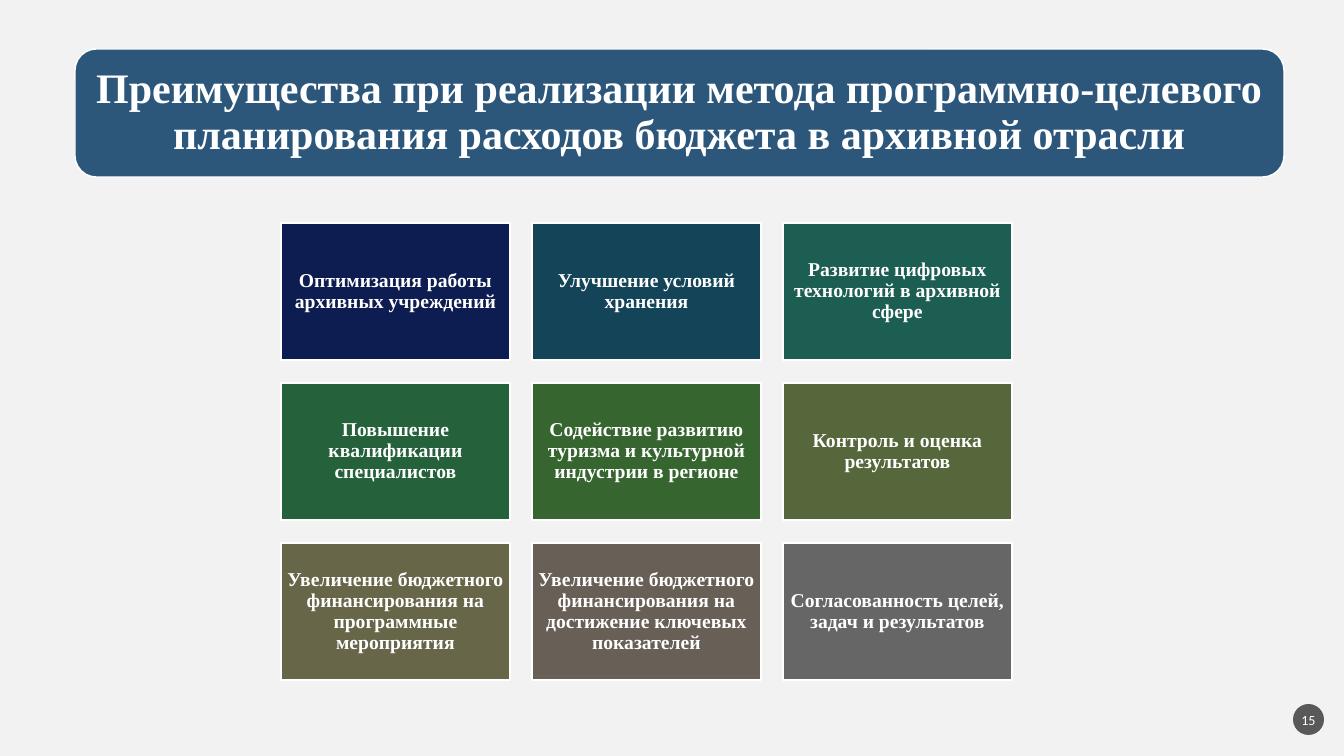
import pptx
import pptx.dml.color
import pptx.enum.shapes
import pptx.enum.text
import pptx.util

RGBColor = pptx.dml.color.RGBColor
SHAPE = pptx.enum.shapes.MSO_SHAPE

EMU_PER_PX = 914400 / 100.8
SLIDE_WIDTH, SLIDE_HEIGHT = 1344, 756

WHITE = RGBColor(0xFF, 0xFF, 0xFF)
BACKGROUND = RGBColor(0xF2, 0xF2, 0xF2)
TITLE_BLUE = RGBColor(0x2C, 0x56, 0x7A)
BADGE_GRAY = RGBColor(0x59, 0x59, 0x59)
NAVY = RGBColor(0x0D, 0x1D, 0x51)
PETROL = RGBColor(0x14, 0x44, 0x58)
TEAL = RGBColor(0x1C, 0x5E, 0x52)
EMERALD = RGBColor(0x25, 0x62, 0x3B)
GREEN = RGBColor(0x36, 0x65, 0x30)
OLIVE = RGBColor(0x55, 0x67, 0x3B)
KHAKI = RGBColor(0x68, 0x66, 0x48)
TAUPE = RGBColor(0x68, 0x5F, 0x57)
GRAY = RGBColor(0x66, 0x66, 0x66)

TITLE = ("Преимущества при реализации метода программно-целевого "
         "планирования расходов бюджета в архивной отрасли")
BENEFITS = [
    ("Оптимизация работы архивных учреждений", NAVY),
    ("Улучшение условий хранения", PETROL),
    ("Развитие цифровых технологий в архивной сфере", TEAL),
    ("Повышение квалификации специалистов", EMERALD),
    ("Содействие развитию туризма и культурной индустрии в регионе", GREEN),
    ("Контроль и оценка результатов", OLIVE),
    ("Увеличение бюджетного финансирования на программные мероприятия", KHAKI),
    ("Увеличение бюджетного финансирования на достижение ключевых показателей", TAUPE),
    ("Согласованность целей, задач и результатов", GRAY),
]


def px(length):
    return pptx.util.Emu(round(length * EMU_PER_PX))


def add_panel(slide, kind, box, fill, outline=WHITE):
    shape = slide.shapes.add_shape(kind, *map(px, box))
    shape.shadow.inherit = False
    shape.fill.solid()
    shape.fill.fore_color.rgb = fill
    if outline is None:
        shape.line.fill.background()
    else:
        shape.line.color.rgb = outline
        shape.line.width = pptx.util.Pt(1)
    return shape


def write_text(shape, text, size, inset=0, font="Times New Roman", bold=True, spacing=0.9):
    frame = shape.text_frame
    frame.word_wrap = True
    frame.vertical_anchor = pptx.enum.text.MSO_ANCHOR.MIDDLE
    frame.margin_left = frame.margin_right = px(inset)
    frame.margin_top = frame.margin_bottom = px(inset)
    paragraph = frame.paragraphs[0]
    paragraph.alignment = pptx.enum.text.PP_ALIGN.CENTER
    paragraph.line_spacing = spacing
    run = paragraph.add_run()
    run.text = text
    run.font.name = font
    run.font.size = pptx.util.Pt(size)
    run.font.bold = bold
    run.font.color.rgb = WHITE


def add_title(slide, box):
    banner = add_panel(slide, SHAPE.ROUNDED_RECTANGLE, box, TITLE_BLUE)
    write_text(banner, TITLE, size=30, inset=12)


def add_benefit_grid(slide, box, columns=3, gap_x=22, gap_y=23):
    left, top, width, height = box
    rows = len(BENEFITS) // columns
    tile_width = (width - gap_x * (columns - 1)) / columns
    tile_height = (height - gap_y * (rows - 1)) / rows
    for index, (text, color) in enumerate(BENEFITS):
        row, column = divmod(index, columns)
        tile_box = (left + column * (tile_width + gap_x),
                    top + row * (tile_height + gap_y), tile_width, tile_height)
        tile = add_panel(slide, SHAPE.RECTANGLE, tile_box, color)
        write_text(tile, text, size=14, inset=6)


def add_page_number(slide, box):
    badge = add_panel(slide, SHAPE.OVAL, box, BADGE_GRAY, outline=None)
    badge.text_frame.word_wrap = True
    write_text(badge, "15", size=10, font="Calibri", bold=False, spacing=1.0)


def main():
    presentation = pptx.Presentation()
    presentation.slide_width = px(SLIDE_WIDTH)
    presentation.slide_height = px(SLIDE_HEIGHT)
    slide = presentation.slides.add_slide(presentation.slide_layouts[6])
    slide.background.fill.solid()
    slide.background.fill.fore_color.rgb = BACKGROUND

    # Title banner
    add_title(slide, (75, 49, 1209, 128))
    # Three by three benefits
    add_benefit_grid(slide, (281, 223, 731, 457))
    # Page number badge
    add_page_number(slide, (1293, 704, 31, 31))

    presentation.save("out.pptx")


if __name__ == "__main__":
    main()
